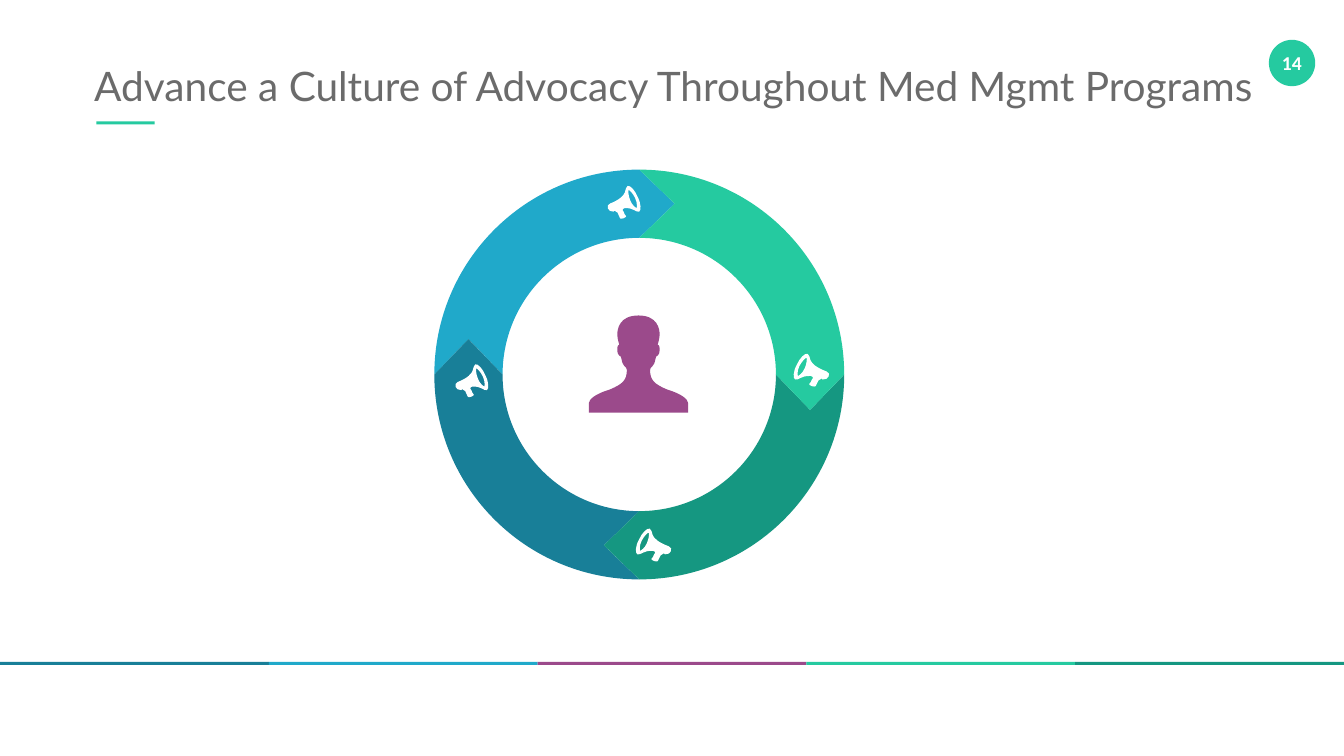
from dataclasses import dataclass
from math import cos, pi, sin
from typing import Callable

from pptx import Presentation
from pptx.dml.color import RGBColor
from pptx.enum.shapes import MSO_SHAPE
from pptx.enum.text import MSO_ANCHOR, PP_ALIGN
from pptx.oxml.ns import qn
from pptx.util import Pt

Point = tuple[float, float]
Segment = tuple[Point, ...]  # one point is a line, three are a cubic curve

COLORS = {
    "teal": "187F98", "blue": "20A9CA", "purple": "9B4A8B",
    "mint": "25CAA0", "green": "159781", "grey": "6B6B6B", "white": "FFFFFF",
}
SLIDE_WIDTH, SLIDE_HEIGHT = 1919.5, 1080
UNIT = 0.72  # icon outlines are drawn in hundredths of an inch

# Ring geometry
CENTER_X, CENTER_Y = 913, 535
OUTER_RADIUS, INNER_RADIUS = 292.7, 195.2
TIP = 50.6
QUARTER_HANDLE = 4 / 3 * (2 ** 0.5 - 1)  # handle length of a quarter circle


@dataclass
class Contour:
    start: Point
    segments: list[Segment]

    def moved(self, place: Callable[[Point], Point]) -> "Contour":
        return Contour(place(self.start),
                       [tuple(place(p) for p in segment) for segment in self.segments])


@dataclass
class RingArrow:
    start_degrees: float
    color: str


@dataclass
class Megaphone:
    left: float
    top: float
    width: float
    mirrored: bool


HORN = Contour((61, 24), [
    ((56, 11), (46, 0), (41, 2)), ((33, 6), (46, 21), (6, 37)),
    ((2, 38), (0, 43), (2, 47)), ((3, 50), (8, 54), (13, 53)),
    ((15, 51),), ((18, 55), (21, 53), (21, 55)),
    ((22, 58), (25, 63), (25, 64)), ((26, 66), (27, 68), (29, 67)),
    ((30, 67), (35, 66), (37, 64)), ((39, 64), (39, 63), (38, 62)),
    ((38, 60), (35, 59), (35, 58)), ((34, 56), (33, 51), (31, 50)),
    ((30, 49), (33, 46), (35, 46)), ((54, 45), (57, 55), (64, 53)),
    ((68, 51), (68, 37), (61, 24)),
])
BELL = Contour((59, 46), [
    ((58, 46), (50, 41), (46, 30)), ((42, 20), (42, 10), (43, 10)),
    ((45, 10), (51, 16), (56, 26)), ((61, 37), (59, 45), (59, 46)),
])
# Right half of the person, from the shoulder up to the crown
SHOULDER = (98.5, 174)
RIGHT_HALF: list[Segment] = [
    ((98.5, 166), (84, 155), (57, 147)), ((31, 136), (23, 128), (23, 108)),
    ((23, 101), (31, 104), (34, 85)), ((34, 77), (42, 85), (42, 66)),
    ((42, 58), (38, 58), (38, 58)), ((38, 58), (42, 46), (42, 38)),
    ((42, 27), (38, 0), (0, 0)),
]
RING_ARROWS = [RingArrow(180, "blue"), RingArrow(90, "teal"),
               RingArrow(0, "green"), RingArrow(270, "mint")]
MEGAPHONES = [
    Megaphone(649.4, 519.1, 48.2, False), Megaphone(1133.3, 504, 51.8, True),
    Megaphone(866.9, 264.2, 48.2, False), Megaphone(907.9, 753.8, 51.8, True),
]


def paint(shape, color: str) -> None:
    shape.fill.solid()
    shape.fill.fore_color.rgb = RGBColor.from_string(COLORS[color])
    shape.line.fill.background()
    shape.shadow.inherit = False


def draw_preset(slide, kind, left: float, top: float, width: float,
                height: float, color: str) -> None:
    shape = slide.shapes.add_shape(kind, Pt(left), Pt(top), Pt(width), Pt(height))
    paint(shape, color)


def draw_outline(slide, contours: list[Contour], color: str) -> None:
    """Draw closed contours, given in points, as one freeform."""
    def fine(point: Point) -> Point:
        return point[0] * 100, point[1] * 100

    builder = slide.shapes.build_freeform(*fine(contours[0].start), scale=Pt(1) / 100)
    for index, contour in enumerate(contours):
        if index:
            builder.move_to(*fine(contour.start))
        builder.add_line_segments(
            [fine(p) for segment in contour.segments for p in segment], close=True)
    shape = builder.convert_to_shape()
    paint(shape, color)

    # Join each three lines of a curve into one cubic curve
    lines = iter(shape.element.xpath(".//a:lnTo"))
    for contour in contours:
        for segment in contour.segments:
            curve = next(lines)
            if len(segment) == 3:
                curve.tag = qn("a:cubicBezTo")
                for line in (next(lines), next(lines)):
                    curve.append(line[0])
                    line.getparent().remove(line)


def draw_text(slide, text: str, left: float, top: float, width: float,
              height: float, font: str, size: float, color: str):
    frame = slide.shapes.add_textbox(Pt(left), Pt(top), Pt(width), Pt(height)).text_frame
    frame.margin_left = frame.margin_right = frame.margin_top = frame.margin_bottom = 0
    frame.vertical_anchor = MSO_ANCHOR.MIDDLE
    frame.word_wrap = False
    paragraph = frame.paragraphs[0]
    paragraph.text = text
    paragraph.font.name = font
    paragraph.font.size = Pt(size)
    paragraph.font.color.rgb = RGBColor.from_string(COLORS[color])
    return paragraph


def draw_ring_arrow(slide, arrow: RingArrow) -> None:
    start = arrow.start_degrees * pi / 180
    end = start + pi / 2

    def at(radius: float, angle: float, forward: float = 0) -> Point:
        return (CENTER_X + radius * cos(angle) - forward * sin(angle),
                CENTER_Y + radius * sin(angle) + forward * cos(angle))

    middle = (OUTER_RADIUS + INNER_RADIUS) / 2
    outer_handle = OUTER_RADIUS * QUARTER_HANDLE
    inner_handle = INNER_RADIUS * QUARTER_HANDLE
    outline = Contour(at(OUTER_RADIUS, start), [
        (at(OUTER_RADIUS, start, outer_handle), at(OUTER_RADIUS, end, -outer_handle),
         at(OUTER_RADIUS, end)),
        (at(middle, end, TIP),),
        (at(INNER_RADIUS, end),),
        (at(INNER_RADIUS, end, -inner_handle), at(INNER_RADIUS, start, inner_handle),
         at(INNER_RADIUS, start)),
        (at(middle, start, TIP),),
    ])
    draw_outline(slide, [outline], arrow.color)


def draw_person(slide, center_x: float, top: float) -> None:
    right = [SHOULDER] + [p for segment in RIGHT_HALF for p in segment]
    left = [(-x, y) for x, y in reversed(right[:-1])]
    left_half = [tuple(left[i:i + 3]) for i in range(0, len(left), 3)]
    outline = Contour((98.5, 193),
                      [(SHOULDER,), *RIGHT_HALF, *left_half, ((-98.5, 193),)])
    draw_outline(slide, [outline.moved(
        lambda p: (center_x + p[0] * UNIT, top + p[1] * UNIT))], "purple")


def draw_megaphone(slide, megaphone: Megaphone) -> None:
    def place(point: Point) -> Point:
        share = point[0] / 67
        if megaphone.mirrored:
            share = 1 - share
        return (megaphone.left + megaphone.width * share,
                megaphone.top + point[1] * UNIT)

    draw_outline(slide, [HORN.moved(place), BELL.moved(place)], "white")


def main() -> None:
    presentation = Presentation()
    presentation.slide_width = Pt(SLIDE_WIDTH)
    presentation.slide_height = Pt(SLIDE_HEIGHT)
    slide = presentation.slides.add_slide(presentation.slide_layouts[6])

    # Page number badge
    draw_preset(slide, MSO_SHAPE.OVAL, 1812.2, 56.9, 66.2, 66.2, "mint")
    page_number = draw_text(slide, "14", 1813.7, 64.8, 62.6, 48.2, "Calibri", 28, "white")
    page_number.font.bold = True
    page_number.alignment = PP_ALIGN.CENTER

    # Title with accent line
    draw_text(slide, "Advance a Culture of Advocacy Throughout Med Mgmt Programs",
              134.6, 87.1, 1674, 70.6, "Lato", 58, "grey")
    draw_preset(slide, MSO_SHAPE.RECTANGLE, 137.5, 173.5, 83.5, 4.3, "mint")

    # Footer stripe
    stripe = ["teal", "blue", "purple", "mint", "green"]
    band_width = SLIDE_WIDTH / len(stripe)
    for index, color in enumerate(stripe):
        draw_preset(slide, MSO_SHAPE.RECTANGLE, index * band_width, 945.4,
                    band_width, 4.3, color)

    # Advocacy cycle around the person
    for arrow in RING_ARROWS:
        draw_ring_arrow(slide, arrow)
    draw_person(slide, 911.9, 450.7)
    for megaphone in MEGAPHONES:
        draw_megaphone(slide, megaphone)

    presentation.save("out.pptx")


if __name__ == "__main__":
    main()
